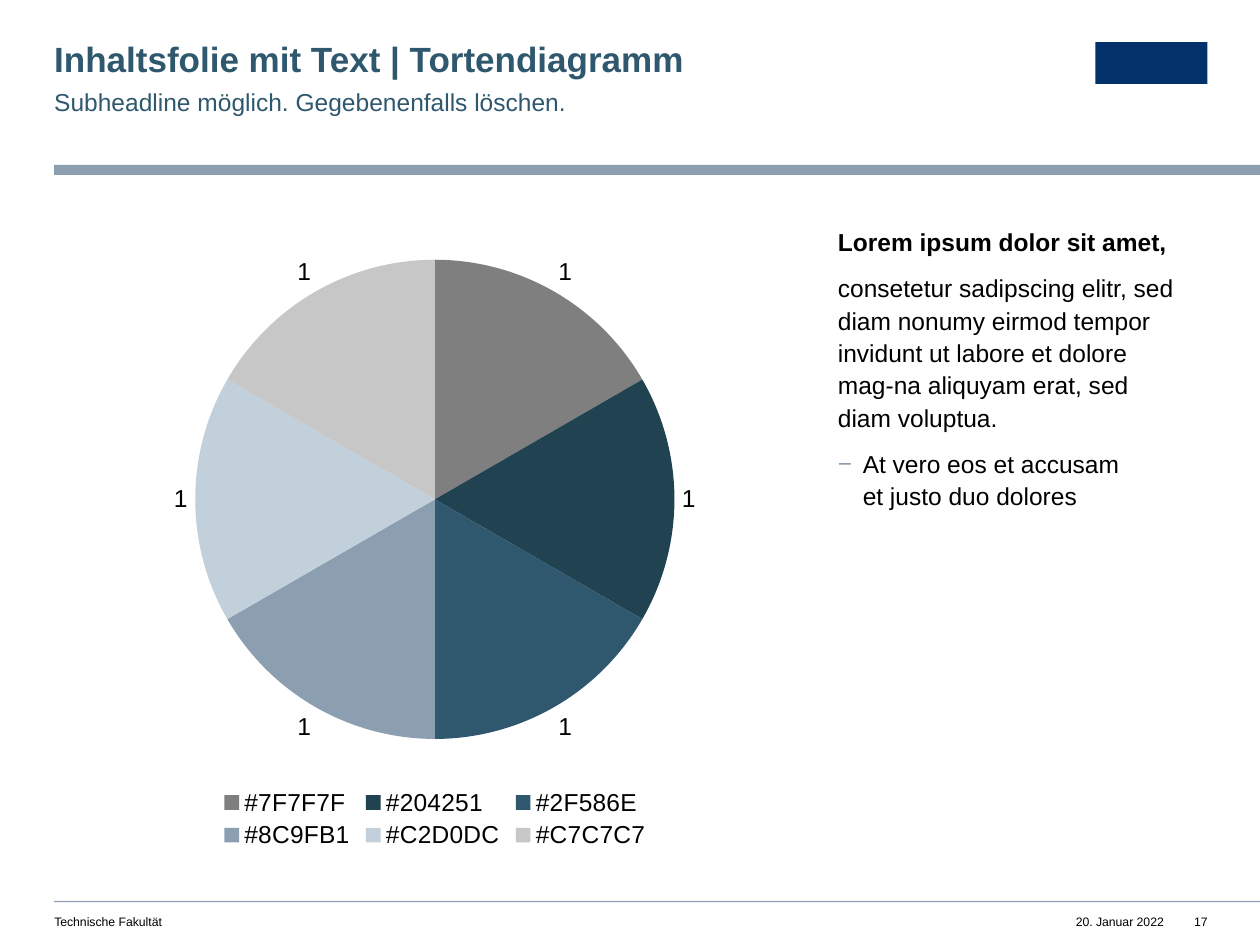
from lxml.etree import SubElement
from pptx import Presentation
from pptx.chart.data import CategoryChartData
from pptx.dml.color import RGBColor
from pptx.enum.chart import XL_CHART_TYPE, XL_LABEL_POSITION, XL_LEGEND_POSITION
from pptx.enum.shapes import MSO_SHAPE
from pptx.enum.text import PP_ALIGN
from pptx.oxml.ns import qn
from pptx.util import Pt

FONT = "Arial"
BLACK, BLUE, GREY_BLUE, NAVY = "000000", "2F586E", "8C9FB1", "04316A"
LEFT, RIGHT = 31, 690
BODY_TOP, BODY_HEIGHT = 128, 360
FOOTER_TOP, FOOTER_HEIGHT = 522.7, 8.6

TITLE = "Inhaltsfolie mit Text | Tortendiagramm"
SUBHEADLINE = "Subheadline möglich. Gegebenenfalls löschen."
LEAD = "Lorem ipsum dolor sit amet,"
BODY = ("consetetur sadipscing elitr, sed diam nonumy eirmod tempor invidunt "
        "ut labore et dolore mag-na aliquyam erat, sed diam voluptua.")
BULLET = "At vero eos et accusam\net justo duo dolores"
SLICES = [("7F7F7F", 1), ("204251", 1), ("2F586E", 1),
          ("8C9FB1", 1), ("C2D0DC", 1), ("C7C7C7", 1)]
# text, left, width, alignment
FOOTERS = [
    ("Technische Fakultät", LEFT, 323, PP_ALIGN.LEFT),
    ("20. Januar 2022", 614, 51, PP_ALIGN.RIGHT),
    ("17", 675, RIGHT - 675, PP_ALIGN.RIGHT),
]
# left, top, width, height, colour
BLOCKS = [
    (LEFT, 94.3, 720 - LEFT, 5.6, GREY_BLUE),
    (LEFT, 514.8, 720 - LEFT, 0.8, GREY_BLUE),
    (626, 24, 64, 24, NAVY),
]


def rgb(colour):
    return RGBColor.from_string(colour)


def style(font, size, colour=BLACK, bold=False):
    font.name, font.size, font.bold = FONT, Pt(size), bold
    font.color.rgb = rgb(colour)


def add_block(slide, left, top, width, height, colour):
    block = slide.shapes.add_shape(
        MSO_SHAPE.RECTANGLE, Pt(left), Pt(top), Pt(width), Pt(height))
    block.shadow.inherit = False
    block.fill.solid()
    block.fill.fore_color.rgb = rgb(colour)
    block.line.fill.background()


def add_text(slide, left, top, width, height, paragraphs, size, colour=BLACK,
             align=PP_ALIGN.LEFT, spacing=1.0, after=0, inset_right=0):
    """Add a text box of (text, bold) paragraphs and return its text frame."""
    frame = slide.shapes.add_textbox(
        Pt(left), Pt(top), Pt(width), Pt(height)).text_frame
    frame.word_wrap = True
    frame.margin_left = frame.margin_top = frame.margin_bottom = 0
    frame.margin_right = Pt(inset_right)
    for index, (text, bold) in enumerate(paragraphs):
        paragraph = frame.add_paragraph() if index else frame.paragraphs[0]
        paragraph.text = text
        paragraph.alignment = align
        paragraph.line_spacing = spacing
        paragraph.space_after = Pt(after)
        style(paragraph.font, size, colour, bold)
    return frame


def add_dash_bullet(paragraph, indent):
    properties = paragraph._p.get_or_add_pPr()
    properties.set("marL", str(Pt(indent)))
    properties.set("indent", str(-Pt(indent)))
    bullet_colour = SubElement(properties, qn("a:buClr"))
    SubElement(bullet_colour, qn("a:srgbClr"), val=GREY_BLUE)
    SubElement(properties, qn("a:buFont"), typeface=FONT)
    SubElement(properties, qn("a:buChar"), char="−")
    # The schema wants the default run properties after the bullet
    properties.append(properties.find(qn("a:defRPr")))


def add_pie(slide):
    data = CategoryChartData()
    data.categories = ["#" + colour for colour, _ in SLICES]
    data.add_series("Series 1", [value for _, value in SLICES])
    chart = slide.shapes.add_chart(
        XL_CHART_TYPE.PIE, Pt(LEFT), Pt(BODY_TOP), Pt(435), Pt(BODY_HEIGHT),
        data).chart
    chart.has_title = False
    style(chart.font, 10)
    chart.has_legend = True
    chart.legend.position = XL_LEGEND_POSITION.BOTTOM
    chart.legend.include_in_layout = False
    style(chart.legend.font, 14)

    plot = chart.plots[0]
    plot.vary_by_categories = True
    plot.has_data_labels = True
    labels = plot.data_labels
    labels.show_value = True
    labels.show_percentage = False
    labels.position = XL_LABEL_POSITION.OUTSIDE_END
    style(labels.font, 14)
    for index, (colour, _) in enumerate(SLICES):
        fill = plot.series[0].points[index].format.fill
        fill.solid()
        fill.fore_color.rgb = rgb(colour)


def main():
    presentation = Presentation()
    presentation.slide_width, presentation.slide_height = Pt(720), Pt(540)
    slide = presentation.slides.add_slide(presentation.slide_layouts[6])

    for block in BLOCKS:
        add_block(slide, *block)
    for text, left, width, align in FOOTERS:
        add_text(slide, left, FOOTER_TOP, width, FOOTER_HEIGHT,
                 [(text, False)], 7, align=align)
    add_text(slide, LEFT, 24, 404, 21.6, [(TITLE, True)], 20, BLUE, spacing=0.9)
    add_text(slide, LEFT, 48.2, 404, 17, [(SUBHEADLINE, False)], 14, BLUE,
             spacing=1.1, after=8, inset_right=28)
    body = add_text(slide, 478.8, BODY_TOP, RIGHT - 478.8, BODY_HEIGHT,
                    [(LEAD, True), (BODY, False), (BULLET, False)], 14,
                    spacing=1.1, after=8, inset_right=14)
    add_dash_bullet(body.paragraphs[-1], 14.2)
    add_pie(slide)
    presentation.save("out.pptx")


if __name__ == "__main__":
    main()
